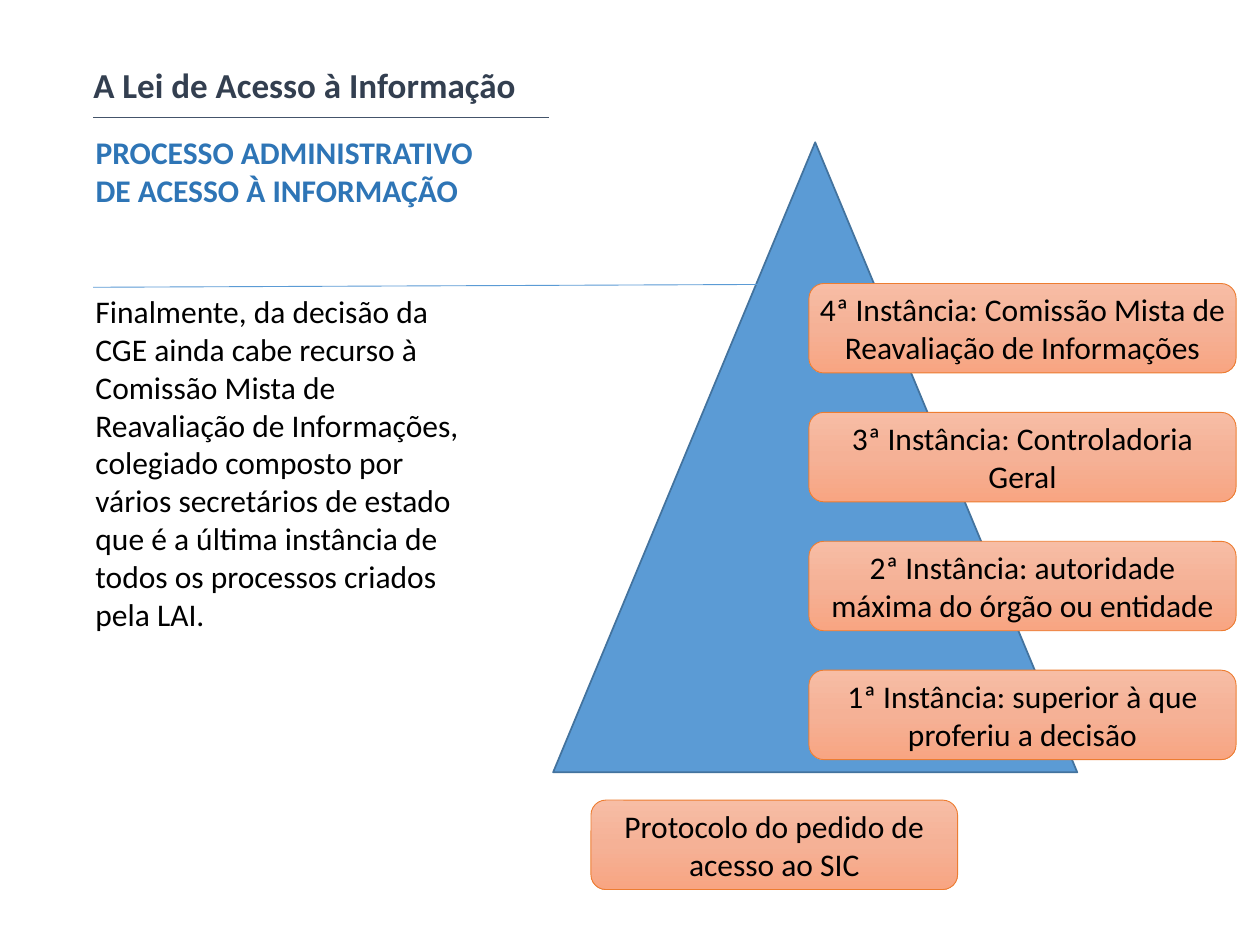
"""Build the slide on the instances of an access-to-information request."""
from copy import deepcopy

from pptx import Presentation
from pptx import util as u
from pptx.dml.color import RGBColor
from pptx.enum import shapes, text
from pptx.oxml import ns
from pptx.oxml import parse_xml

BLACK = RGBColor(0x00, 0x00, 0x00)
SLATE = RGBColor(0x33, 0x3F, 0x50)
RULE_GREY = RGBColor(0x44, 0x54, 0x6A)
HEADING_BLUE = RGBColor(0x2E, 0x75, 0xB6)
BLUE = RGBColor(0x5B, 0x9B, 0xD5)
EDGE_BLUE = RGBColor(0x43, 0x73, 0x9E)
ORANGE = RGBColor(0xED, 0x7D, 0x31)
PEACH_STOPS = [
    (0, RGBColor(0xF7, 0xBD, 0xA5)),
    (0.5, RGBColor(0xF5, 0xB1, 0x96)),
    (1, RGBColor(0xF8, 0xA5, 0x82)),
]

BOX_HEIGHT = 0.71
INSTANCE_LEFT, INSTANCE_TOP, INSTANCE_WIDTH = 6.42, 2.25, 3.39
INSTANCE_PITCH = 1.023
INSTANCES = [
    "4ª Instância: Comissão Mista de Reavaliação de Informações",
    "3ª Instância: Controladoria Geral",
    "2ª Instância: autoridade máxima do órgão ou entidade",
    "1ª Instância: superior à que proferiu a decisão",
]
EXPLANATION = (
    "Finalmente, da decisão da CGE ainda cabe recurso à Comissão Mista de "
    "Reavaliação de Informações, colegiado composto por vários secretários "
    "de estado que é a última instância de todos os processos criados pela LAI."
)


def inches(*lengths):
    """Convert numbers to inch lengths."""
    return [u.Inches(length) for length in lengths]


def write(frame, lines, align=text.PP_ALIGN.LEFT, **formats):
    """Fill a text frame with one paragraph per line."""
    style = {"name": "Calibri", "size": u.Pt(18), "bold": False, **formats}
    color = style.pop("color", BLACK)
    frame.text = "\n".join(lines)
    for paragraph in frame.paragraphs:
        paragraph.alignment = align
        for attribute, value in style.items():
            setattr(paragraph.font, attribute, value)
        paragraph.font.color.rgb = color


def set_title(slide, title, at):
    """Place and format the title placeholder."""
    heading = slide.shapes.title
    heading.left, heading.top, heading.width, heading.height = inches(*at)
    write(heading.text_frame, [title], size=u.Pt(20), bold=True, color=SLATE)
    frame = heading.text_frame
    frame.word_wrap = False
    frame.auto_size = text.MSO_AUTO_SIZE.NONE
    frame.vertical_anchor = text.MSO_ANCHOR.TOP


def add_text(slide, lines, at, **formats):
    """Add a wrapping text box."""
    frame = slide.shapes.add_textbox(*inches(*at)).text_frame
    frame.word_wrap = True
    write(frame, lines, **formats)


def add_rule(slide, start, end, color):
    """Add a thin line without a shadow."""
    rule = slide.shapes.add_connector(
        shapes.MSO_CONNECTOR.STRAIGHT, *inches(*start, *end))
    rule.line.color.rgb = color
    rule.line.width = u.Pt(0.5)
    rule._element.spPr.append(
        parse_xml(f"<a:effectLst {ns.nsdecls('a')}/>"))


def add_outlined(slide, kind, at, edge, weight):
    """Add a preset shape with an outline and no shadow."""
    shape = slide.shapes.add_shape(kind, *inches(*at))
    shape.shadow.inherit = False
    shape.line.color.rgb = edge
    shape.line.width = u.Pt(weight)
    return shape


def add_pyramid(slide, at):
    """Add the blue triangle behind the instances."""
    pyramid = add_outlined(
        slide, shapes.MSO_SHAPE.ISOSCELES_TRIANGLE, at, EDGE_BLUE, 1)
    pyramid.fill.solid()
    pyramid.fill.fore_color.rgb = BLUE


def add_step(slide, label, at):
    """Add a peach rounded box with a centred label."""
    step = add_outlined(
        slide, shapes.MSO_SHAPE.ROUNDED_RECTANGLE, at, ORANGE, 0.5)
    step.fill.gradient()
    step.fill.gradient_angle = 270
    stop_list = step._element.spPr.find(".//" + ns.qn("a:gsLst"))
    stop_list.append(deepcopy(stop_list[0]))
    for stop, (position, color) in zip(step.fill.gradient_stops, PEACH_STOPS):
        stop.position = position
        stop.color.rgb = color
    frame = step.text_frame
    frame.word_wrap = True
    frame.vertical_anchor = text.MSO_ANCHOR.MIDDLE
    for side in ("left", "right", "top", "bottom"):
        setattr(frame, f"margin_{side}", u.Inches(0.05))
    write(frame, [label], align=text.PP_ALIGN.CENTER)


def main():
    """Assemble and save the slide."""
    deck = Presentation()
    deck.slide_width, deck.slide_height = inches(10, 7.5)
    slide = deck.slides.add_slide(deck.slide_layouts[5])

    set_title(slide, "A Lei de Acesso à Informação", (0.64, 0.45, 3.59, 0.44))
    add_pyramid(slide, (4.39, 1.13, 4.16, 5))
    add_rule(slide, (0.74, 0.93), (4.36, 0.93), RULE_GREY)
    add_text(slide, ["PROCESSO ADMINISTRATIVO", "DE ACESSO À INFORMAÇÃO"],
             (0.66, 1.01, 3.28, BOX_HEIGHT), bold=True, color=HEADING_BLUE)
    add_text(slide, [EXPLANATION], (0.66, 2.27, 3.3, 2.83))
    add_rule(slide, (0.74, 2.28), (7.83, 2.25), BLUE)

    for row, label in enumerate(INSTANCES):
        top = INSTANCE_TOP + row * INSTANCE_PITCH
        add_step(slide, label,
                 (INSTANCE_LEFT, top, INSTANCE_WIDTH, BOX_HEIGHT))
    add_step(slide, "Protocolo do pedido de acesso ao SIC",
             (4.69, 6.35, 2.91, BOX_HEIGHT))

    deck.save("out.pptx")


if __name__ == "__main__":
    main()
